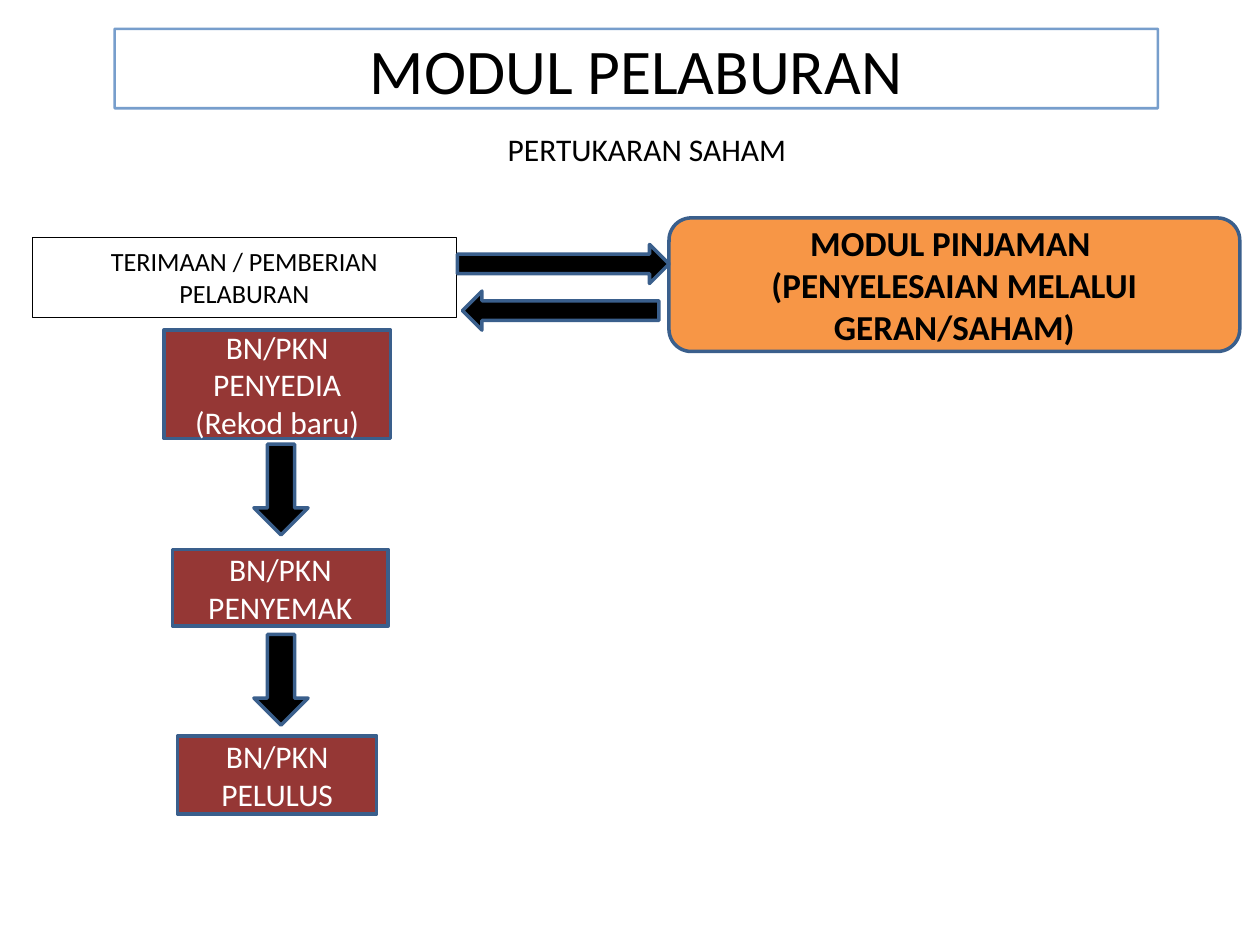
from dataclasses import dataclass

from lxml import etree
from pptx import Presentation
from pptx import util as u
from pptx.dml.color import RGBColor
from pptx.enum import shapes, text
from pptx.oxml import ns


@dataclass(frozen=True)
class Theme:
    font: str = "Calibri"
    black: str = "000000"
    white: str = "FFFFFF"
    red: str = "953735"
    orange: str = "F79646"
    outline: str = "3A5F8C"
    title_outline: str = "4F81BD"
    title_size: float = 36.3
    module_size: float = 20
    body_size: float = 18
    entry_size: float = 15


THEME = Theme()
KIND = shapes.MSO_SHAPE


def write_paragraphs(shape, lines, size, color, bold=False):
    frame = shape.text_frame
    frame.word_wrap = True
    for index, line in enumerate(lines):
        paragraph = frame.add_paragraph() if index else frame.paragraphs[0]
        paragraph.alignment = text.PP_ALIGN.CENTER
        run = paragraph.add_run()
        run.text = line
        run.font.name = THEME.font
        run.font.size = u.Pt(size)
        run.font.bold = bold
        run.font.color.rgb = RGBColor.from_string(color)


def add_shape(slide, kind, box, fill, outline=THEME.outline, width=2):
    shape = slide.shapes.add_shape(kind, *map(u.Inches, box))
    shape.shadow.inherit = False
    if fill:
        shape.fill.solid()
        shape.fill.fore_color.rgb = RGBColor.from_string(fill)
    else:
        shape.fill.background()
    shape.line.color.rgb = RGBColor.from_string(outline)
    shape.line.width = u.Pt(width)
    return shape


def add_title(slide, box, title):
    shape = add_shape(slide, KIND.RECTANGLE, box, None, THEME.title_outline, 1.5)
    color = shape.line._ln.find(".//" + ns.qn("a:srgbClr"))
    etree.SubElement(color, ns.qn("a:alpha"), val="76000")
    shape.text_frame.vertical_anchor = text.MSO_ANCHOR.MIDDLE
    write_paragraphs(shape, [title], THEME.title_size, THEME.black)


def add_subtitle(slide, box, subtitle):
    shape = slide.shapes.add_textbox(*map(u.Inches, box))
    write_paragraphs(shape, [subtitle], THEME.body_size, THEME.black)
    shape.text_frame.auto_size = text.MSO_AUTO_SIZE.SHAPE_TO_FIT_TEXT


def add_step(slide, box, lines):
    shape = add_shape(slide, KIND.RECTANGLE, box, THEME.red)
    shape.text_frame.vertical_anchor = text.MSO_ANCHOR.MIDDLE
    write_paragraphs(shape, lines, THEME.body_size, THEME.white)


def add_entry(slide, box, label):
    shape = add_shape(slide, KIND.RECTANGLE, box, THEME.white, THEME.black, 0.25)
    shape.text_frame.vertical_anchor = text.MSO_ANCHOR.MIDDLE
    write_paragraphs(shape, [label], THEME.entry_size, THEME.black)


def add_module(slide, box, lines):
    shape = add_shape(slide, KIND.ROUNDED_RECTANGLE, box, THEME.orange)
    shape.text_frame.vertical_anchor = text.MSO_ANCHOR.MIDDLE
    write_paragraphs(shape, lines, THEME.module_size, THEME.black, bold=True)


def add_arrow(slide, box, rotation=0):
    arrow = add_shape(slide, KIND.RIGHT_ARROW, box, THEME.black)
    arrow.rotation = rotation


def main():
    presentation = Presentation()
    presentation.slide_width = u.Inches(10)
    presentation.slide_height = u.Inches(7.5)
    slide = presentation.slides.add_slide(presentation.slide_layouts[6])

    add_title(slide, (0.91, 0.23, 8.28, 0.63), "MODUL PELABURAN")
    add_subtitle(slide, (2.44, 0.98, 5.39, 0.4), "PERTUKARAN SAHAM")

    steps = [
        ((1.3, 2.62, 1.8, 0.86), ["BN/PKN PENYEDIA", "(Rekod baru)"]),
        ((1.37, 4.36, 1.71, 0.61), ["BN/PKN PENYEMAK"]),
        ((1.41, 5.84, 1.58, 0.62), ["BN/PKN PELULUS"]),
    ]
    for box, lines in steps:
        add_step(slide, box, lines)

    add_entry(slide, (0.26, 1.88, 3.36, 0.64), "TERIMAAN / PEMBERIAN PELABURAN")
    add_module(
        slide,
        (5.31, 1.73, 4.53, 1.06),
        ["MODUL PINJAMAN ", "(PENYELESAIAN MELALUI GERAN/SAHAM)"],
    )

    add_arrow(slide, (3.63, 1.94, 1.68, 0.31))
    add_arrow(slide, (3.67, 2.31, 1.56, 0.31), rotation=180)
    for top in (3.67, 5.18):
        add_arrow(slide, (1.87, top, 0.72, 0.43), rotation=90)

    presentation.save("out.pptx")


if __name__ == "__main__":
    main()
